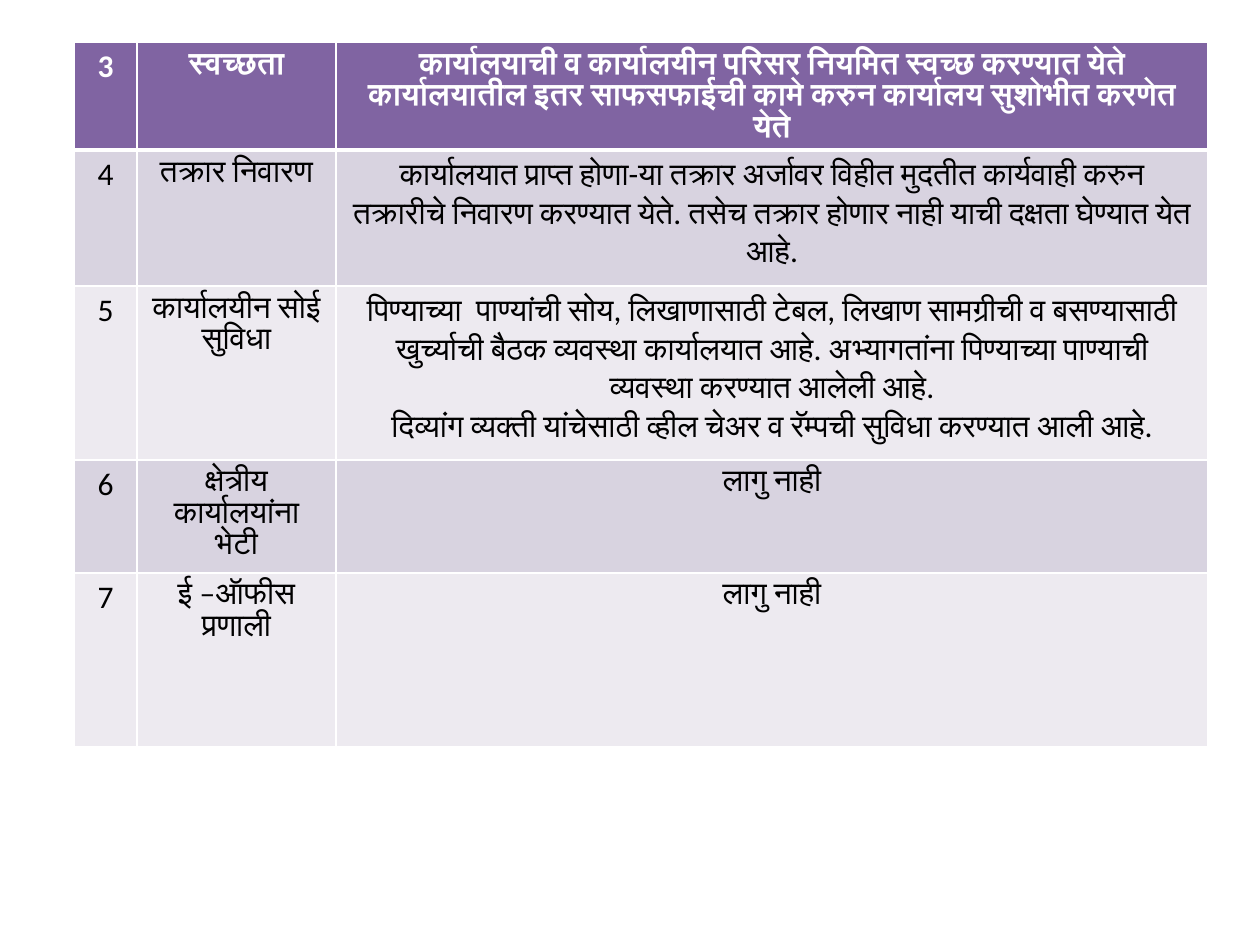
"""Build a slide with the table of office services."""
from lxml import etree
from pptx import Presentation
from pptx import util as u
from pptx.dml.color import RGBColor
from pptx.enum import text
from pptx.oxml.ns import qn

SLIDE_SIZE = (1260, 945)
EMU_PER_PX = 914400 / 126
FONT = "Calibri"
WHITE = RGBColor(0xFF, 0xFF, 0xFF)
BLACK = RGBColor(0x00, 0x00, 0x00)
PURPLE = RGBColor(0x80, 0x64, 0xA2)
BANDS = (RGBColor(0xD8, 0xD3, 0xE0), RGBColor(0xED, 0xEA, 0xF0))
TABLE_ORIGIN = (74, 42)
COLUMN_WIDTHS = (63, 199, 872)
COLUMN_MARGINS = (13, 13, 16)
ROW_HEIGHTS = (108, 136, 174, 113, 174)
TIGHT = {"line_spacing": u.Pt(18), "margin_top": 9, "margin_bottom": 3}
NORMAL = {"line_spacing": 1.0, "margin_top": 6, "margin_bottom": 6}

SERVICES = [
    ("3", "स्वच्छता",
     ["कार्यालयाची व कार्यालयीन परिसर नियमित स्वच्छ करण्यात येते कार्यालयातील "
      "इतर साफसफाईची कामे करुन कार्यालय सुशोभीत करणेत येते"], TIGHT),
    ("4", "तक्रार निवारण",
     ["कार्यालयात प्राप्त होणा-या तक्रार अर्जावर विहीत मुदतीत कार्यवाही करुन "
      "तक्रारीचे निवारण करण्यात येते. तसेच तक्रार होणार नाही याची दक्षता "
      "घेण्यात येत आहे."], NORMAL),
    ("5", "कार्यालयीन सोई सुविधा",
     ["पिण्याच्या  पाण्यांची सोय, लिखाणासाठी टेबल, लिखाण सामग्रीची व "
      "बसण्यासाठी खुर्च्याची बैठक व्यवस्था कार्यालयात आहे. अभ्यागतांना "
      "पिण्याच्या पाण्याची व्यवस्था करण्यात आलेली आहे.",
      "दिव्यांग व्यक्ती यांचेसाठी व्हील चेअर व रॅम्पची सुविधा करण्यात आली आहे."],
     NORMAL),
    ("6", "क्षेत्रीय कार्यालयांना भेटी", ["लागु नाही"], TIGHT),
    ("7", "ई –ऑफीस प्रणाली", ["लागु नाही"], TIGHT),
]


def px(length):
    return u.Emu(round(length * EMU_PER_PX))


def set_borders(cell, widths):
    properties = cell._tc.get_or_add_tcPr()
    for side, width in widths.items():
        border = etree.SubElement(properties, qn(f"a:ln{side}"), w=str(u.Pt(width)))
        fill = etree.SubElement(border, qn("a:solidFill"))
        etree.SubElement(fill, qn("a:srgbClr"), val=str(WHITE))


def set_margins(cell, side_margin, layout):
    margins = {"margin_left": side_margin, "margin_right": side_margin,
               "margin_top": layout["margin_top"],
               "margin_bottom": layout["margin_bottom"]}
    for name, value in margins.items():
        setattr(cell, name, px(value))


def write_cell(cell, paragraphs, spacing, font_format):
    frame = cell.text_frame
    frame.text = "\n".join(paragraphs)
    for paragraph in frame.paragraphs:
        paragraph.alignment = text.PP_ALIGN.CENTER
        paragraph.line_spacing = spacing
        for run in paragraph.runs:
            for name, value in font_format.items():
                setattr(run.font, name, value)
            run.font.color.rgb = WHITE if font_format["bold"] else BLACK
            etree.SubElement(run._r.get_or_add_rPr(), qn("a:cs"), typeface=FONT)


def fill_row(cells, row_index, service):
    number, subject, details, detail_layout = service
    is_header = row_index == 0
    font_format = {"name": FONT, "size": u.Pt(18), "bold": is_header}
    borders = {"L": 1, "R": 1, "T": 3 if row_index == 1 else 1,
               "B": 3 if is_header else 1}
    contents = (([number], NORMAL), ([subject], TIGHT), (details, detail_layout))
    for cell, margin, (paragraphs, layout) in zip(cells, COLUMN_MARGINS, contents):
        set_borders(cell, borders)
        set_margins(cell, margin, layout)
        cell.fill.solid()
        cell.fill.fore_color.rgb = PURPLE if is_header else BANDS[(row_index - 1) % 2]
        write_cell(cell, paragraphs, layout["line_spacing"], font_format)


def add_services_table(slide):
    extent = (sum(COLUMN_WIDTHS), sum(ROW_HEIGHTS))
    table = slide.shapes.add_table(len(SERVICES), len(COLUMN_WIDTHS),
                                   *map(px, TABLE_ORIGIN + extent)).table
    for column, width in zip(table.columns, COLUMN_WIDTHS):
        column.width = px(width)
    for index, (row, height) in enumerate(zip(table.rows, ROW_HEIGHTS)):
        row.height = px(height)
        fill_row(row.cells, index, SERVICES[index])


def main():
    deck = Presentation()
    deck.slide_width, deck.slide_height = map(px, SLIDE_SIZE)
    slide = deck.slides.add_slide(deck.slide_layouts[6])
    add_services_table(slide)
    deck.save("out.pptx")


if __name__ == "__main__":
    main()
